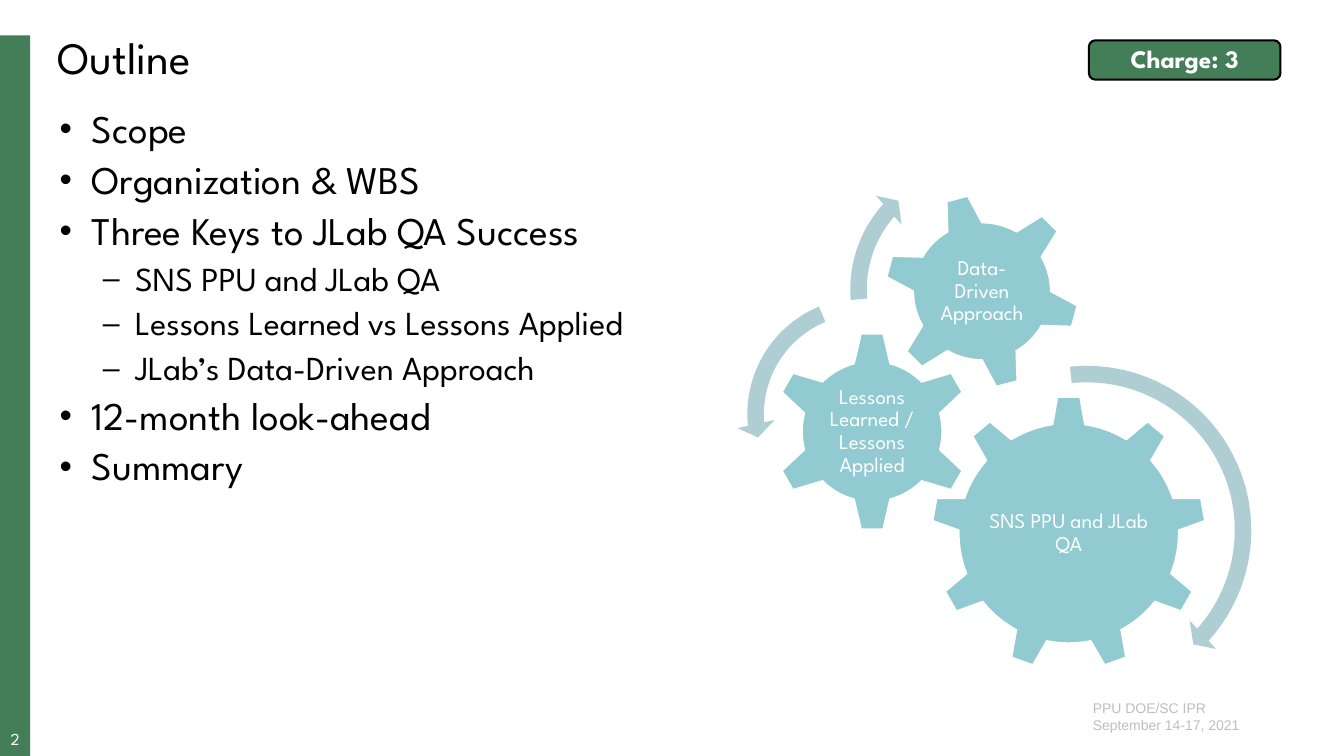
from lxml.etree import SubElement
from pptx import Presentation
from pptx.dml.color import RGBColor
from pptx.enum.shapes import MSO_SHAPE as Shape
from pptx.enum.text import MSO_ANCHOR as Anchor, MSO_AUTO_SIZE as AutoSize, PP_ALIGN as Align
from pptx.oxml.ns import qn
from pptx.util import Inches, Pt

WIDTH, HEIGHT = 13.33, 7.5
FONT, FOOTER_FONT = "League Spartan", "Arial"
BLACK = RGBColor(0x00, 0x00, 0x00)
WHITE = RGBColor(0xFF, 0xFF, 0xFF)
GREEN = RGBColor(0x44, 0x7E, 0x59)
TEAL = RGBColor(0x3B, 0xA2, 0xAD)
PALE_TEAL = RGBColor(0xAF, 0xCE, 0xD3)
GREY = RGBColor(0xBF, 0xBF, 0xBF)

TITLE = "Outline"
CHARGE = "Charge: 3"
PAGE_NUMBER = "2"
FOOTER = ["PPU DOE/SC IPR", "September 14-17, 2021"]
TOPICS = [
    (0, "Scope"),
    (0, "Organization & WBS"),
    (0, "Three Keys to JLab QA Success"),
    (1, "SNS PPU and JLab QA"),
    (1, "Lessons Learned vs Lessons Applied"),
    (1, "JLab’s Data-Driven Approach"),
    (0, "12-month look-ahead"),
    (0, "Summary"),
]
# level: bullet, text size, left indent in inches
LEVELS = [("•", 28, 0.32), ("–", 24, 0.75)]
HANGING = 0.32
# label, preset, centre, gear size, label width and height, rotation
GEARS = [
    ("SNS PPU and JLab QA", Shape.GEAR_9, (10.6, 5.29), 2.72, (1.63, 1.4), 0),
    ("Lessons Learned / Lessons Applied", Shape.GEAR_6, (8.65, 4.28), 1.98, (0.98, 0.98), 0),
    ("Data- Driven Approach", Shape.GEAR_6, (9.74, 2.89), 1.94, (1.09, 1.09), 345),
]
# preset, centre, size, adjustments
ARROWS = [
    (Shape.CIRCULAR_ARROW, (10.78, 5.26), 3.48, (0.047, 2.99, 25.234, 158.457, 0.055)),
    (Shape.LEFT_CIRCULAR_ARROW, (8.57, 4.11), 2.53, (0.065, 4.3, 104.891, 148.378, 0.075)),
    (Shape.CIRCULAR_ARROW, (9.69, 2.87), 2.73, (0.06, 3.941, 133.138, 105.082, 0.07)),
]


def box(left, top, width, height):
    return [Inches(length) for length in (left, top, width, height)]


def centred(centre, width, height):
    return box(centre[0] - width / 2, centre[1] - height / 2, width, height)


def write(shape, lines, size, color=BLACK, font=FONT, bold=False, align=Align.LEFT,
          anchor=Anchor.TOP, inset=None, spacing=0.9):
    """Fill a shape with one paragraph per line and return the paragraphs."""
    frame = shape.text_frame
    frame.text = "\n".join(lines)
    frame.word_wrap = True
    frame.auto_size = AutoSize.NONE
    frame.vertical_anchor = anchor
    if inset is not None:
        frame.margin_left = frame.margin_right = Inches(inset)
        frame.margin_top = frame.margin_bottom = Inches(inset)
    for paragraph in frame.paragraphs:
        paragraph.alignment = align
        paragraph.line_spacing = spacing
        paragraph.space_before = Pt(0)
        for run in paragraph.runs:
            run.font.name, run.font.size, run.font.bold = font, Pt(size), bold
            run.font.color.rgb = color
    return frame.paragraphs


def add_bullet(paragraph, bullet, indent):
    properties = paragraph._p.get_or_add_pPr()
    properties.set("marL", str(Inches(indent)))
    properties.set("indent", str(-Inches(HANGING)))
    bullet_color = SubElement(properties, qn("a:buClr"))
    SubElement(bullet_color, qn("a:srgbClr"), val=str(BLACK))
    SubElement(properties, qn("a:buSzPct"), val="90000")
    SubElement(properties, qn("a:buChar"), char=bullet)


def add_filled(slide, preset, place, fill, line=None, line_width=0, opacity=None):
    shape = slide.shapes.add_shape(preset, *place)
    shape.shadow.inherit = False
    shape.fill.solid()
    shape.fill.fore_color.rgb = fill
    if opacity is not None:
        color = shape.fill._xPr.find(".//" + qn("a:srgbClr"))
        SubElement(color, qn("a:alpha"), val=str(opacity * 1000))
    if line is None:
        shape.line.fill.background()
    else:
        shape.line.color.rgb = line
        shape.line.width = Pt(line_width)
    return shape


def place_placeholder(placeholder, place):
    placeholder.left, placeholder.top, placeholder.width, placeholder.height = place


def add_frame(slide):
    add_filled(slide, Shape.RECTANGLE, box(0, 0.35, 0.3, HEIGHT - 0.35), GREEN)
    number = slide.shapes.add_textbox(*box(0, 7.25, 0.3, 0.17))
    write(number, [PAGE_NUMBER], 12, color=WHITE, align=Align.CENTER, inset=0)
    footer = slide.shapes.add_textbox(*box(10.74, 6.89, 2.23, 0.44))
    write(footer, FOOTER, 10, color=GREY, font=FOOTER_FONT, spacing=1.0)
    charge = add_filled(slide, Shape.ROUNDED_RECTANGLE, box(10.8, 0.4, 1.9, 0.39),
                        GREEN, line=BLACK, line_width=1.5)
    write(charge, [CHARGE], 18, color=WHITE, bold=True, align=Align.CENTER,
          anchor=Anchor.MIDDLE, inset=0.05)


def add_outline(slide):
    title, body = slide.shapes.title, slide.placeholders[1]
    place_placeholder(title, box(0.47, 0.3, 12.5, 0.59))
    write(title, [TITLE], 32)
    place_placeholder(body, box(0.49, 1.04, 12.5, 5.86))
    paragraphs = write(body, [topic for _, topic in TOPICS], LEVELS[0][1])
    for row, (paragraph, (level, _)) in enumerate(zip(paragraphs, TOPICS)):
        bullet, size, indent = LEVELS[level]
        paragraph.level = level
        paragraph.space_before = Pt(6 if row else 0)
        add_bullet(paragraph, bullet, indent)
        paragraph.runs[0].font.size = Pt(size)


def add_gears(slide):
    for label, preset, centre, size, label_size, rotation in GEARS:
        gear = add_filled(slide, preset, centred(centre, size, size), TEAL,
                          line=WHITE, line_width=0.85, opacity=56)
        gear.rotation = rotation
        caption = slide.shapes.add_textbox(*centred(centre, *label_size))
        write(caption, [label], 15, color=WHITE, align=Align.CENTER,
              anchor=Anchor.MIDDLE, inset=0.02)
    for preset, centre, size, adjustments in ARROWS:
        arrow = add_filled(slide, preset, centred(centre, size, size), PALE_TEAL)
        for index, value in enumerate(adjustments):
            arrow.adjustments[index] = value


def main():
    deck = Presentation()
    deck.slide_width, deck.slide_height = Inches(WIDTH), Inches(HEIGHT)
    slide = deck.slides.add_slide(deck.slide_layouts[1])
    add_frame(slide)
    add_outline(slide)
    add_gears(slide)
    deck.save("out.pptx")


if __name__ == "__main__":
    main()
